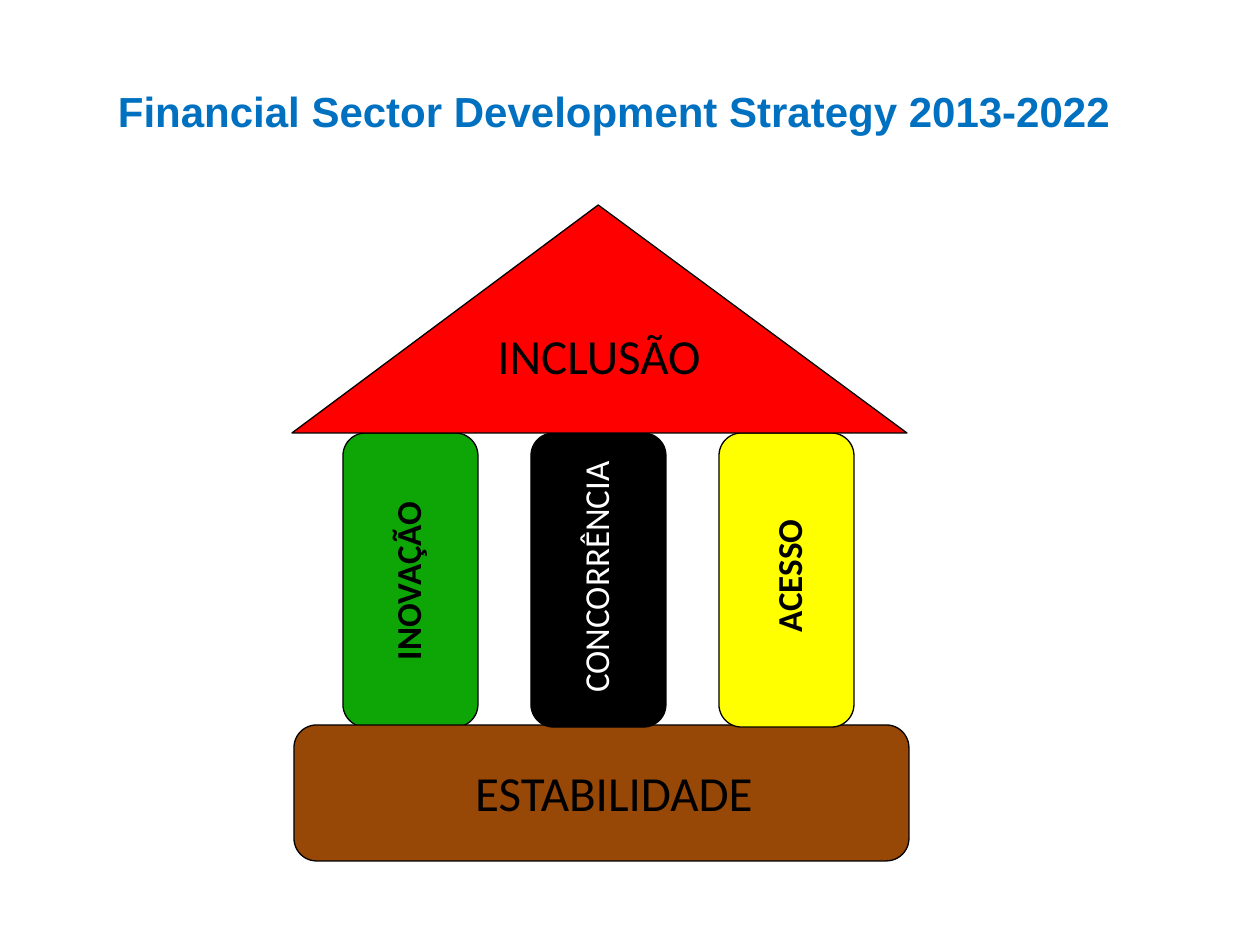
from pptx import Presentation
from pptx.dml.color import RGBColor
from pptx.enum.shapes import MSO_SHAPE
from pptx.enum.text import MSO_ANCHOR, MSO_AUTO_SIZE, PP_ALIGN
from pptx.util import Emu, Pt

ROUNDED, TRIANGLE = MSO_SHAPE.ROUNDED_RECTANGLE, MSO_SHAPE.ISOSCELES_TRIANGLE
TOP, MIDDLE = MSO_ANCHOR.TOP, MSO_ANCHOR.MIDDLE
CENTER = PP_ALIGN.CENTER
GROW, NO_FIT = MSO_AUTO_SIZE.SHAPE_TO_FIT_TEXT, MSO_AUTO_SIZE.NONE

BLUE = RGBColor(0x00, 0x70, 0xC0)
GREEN = RGBColor(0x0E, 0xA6, 0x06)
BROWN = RGBColor(0x97, 0x47, 0x06)
YELLOW = RGBColor(0xFF, 0xFF, 0x00)
RED = RGBColor(0xFF, 0x00, 0x00)
BLACK = RGBColor(0x00, 0x00, 0x00)
WHITE = RGBColor(0xFF, 0xFF, 0xFF)

PX_PER_INCH = 126
PILLAR_LEFT, PILLAR_PITCH = 343, 188


def px(n):
    return Emu(round(n * 914400 / PX_PER_INCH))


def write(tf, text, size=20, color=BLACK, bold=False, font="Calibri",
          anchor=MIDDLE, fit=NO_FIT, after=0):
    tf.word_wrap = True
    tf.auto_size = fit
    tf.vertical_anchor = anchor
    p = tf.paragraphs[0]
    p.alignment = CENTER
    p.space_after = Pt(after)
    r = p.add_run()
    r.text = text
    r.font.name, r.font.size, r.font.bold = font, Pt(size), bold
    r.font.color.rgb = color


class House:
    """Style and slide of the temple diagram; boxes are in px."""

    def __init__(self, slide):
        self.slide = slide
        self.outline, self.line_width = BLACK, Pt(0.75)

    def title(self, text, x, y, w, h):
        sp = self.slide.shapes.title
        sp.left, sp.top, sp.width, sp.height = map(px, (x, y, w, h))
        write(sp.text_frame, text, size=24, color=BLUE, bold=True, font="Arial")

    def block(self, kind, x, y, w, h, fill):
        sp = self.slide.shapes.add_shape(kind, *map(px, (x, y, w, h)))
        sp.shadow.inherit = False
        sp.fill.solid()
        sp.fill.fore_color.rgb = fill
        sp.line.color.rgb = self.outline
        sp.line.width = self.line_width
        return sp

    def pillar(self, index, fill):
        return self.block(ROUNDED, PILLAR_LEFT + index * PILLAR_PITCH, 433,
                          135, 294, fill)

    def label(self, text, cx, cy, w, h=55, rotation=0, **style):
        """Text box centred on (cx, cy)."""
        sp = self.slide.shapes.add_textbox(
            *map(px, (cx - w / 2, cy - h / 2, w, h)))
        sp.rotation = rotation
        write(sp.text_frame, text, fit=GROW, **style)


def main():
    prs = Presentation()
    prs.slide_width, prs.slide_height = px(1260), px(945)
    house = House(prs.slides.add_slide(prs.slide_layouts[5]))
    house.title("Financial Sector Development Strategy 2013-2022",
                105, 32, 1018, 158)

    # The base covers the foot of the green pillar only.
    house.pillar(0, GREEN)
    house.block(ROUNDED, 294, 725, 615, 136, BROWN)
    house.pillar(2, YELLOW)
    house.label("ESTABILIDADE", 614, 792, 368, 72, size=28)
    house.pillar(1, BLACK)

    roof = house.block(TRIANGLE, 292, 205, 615, 228, RED)
    roof.adjustments[0] = 0.498
    write(roof.text_frame, "INCLUSÃO", size=28, anchor=TOP, after=10)

    for text, cx, cy, w, color, bold in (
            ("INOVAÇÃO", 407, 581, 217, BLACK, True),
            ("CONCORRÊNCIA", 595, 577, 268, WHITE, False),
            ("ACESSO", 788, 576, 188, BLACK, True)):
        house.label(text, cx, cy, w, rotation=270, color=color, bold=bold)

    prs.save("out.pptx")


if __name__ == "__main__":
    main()
